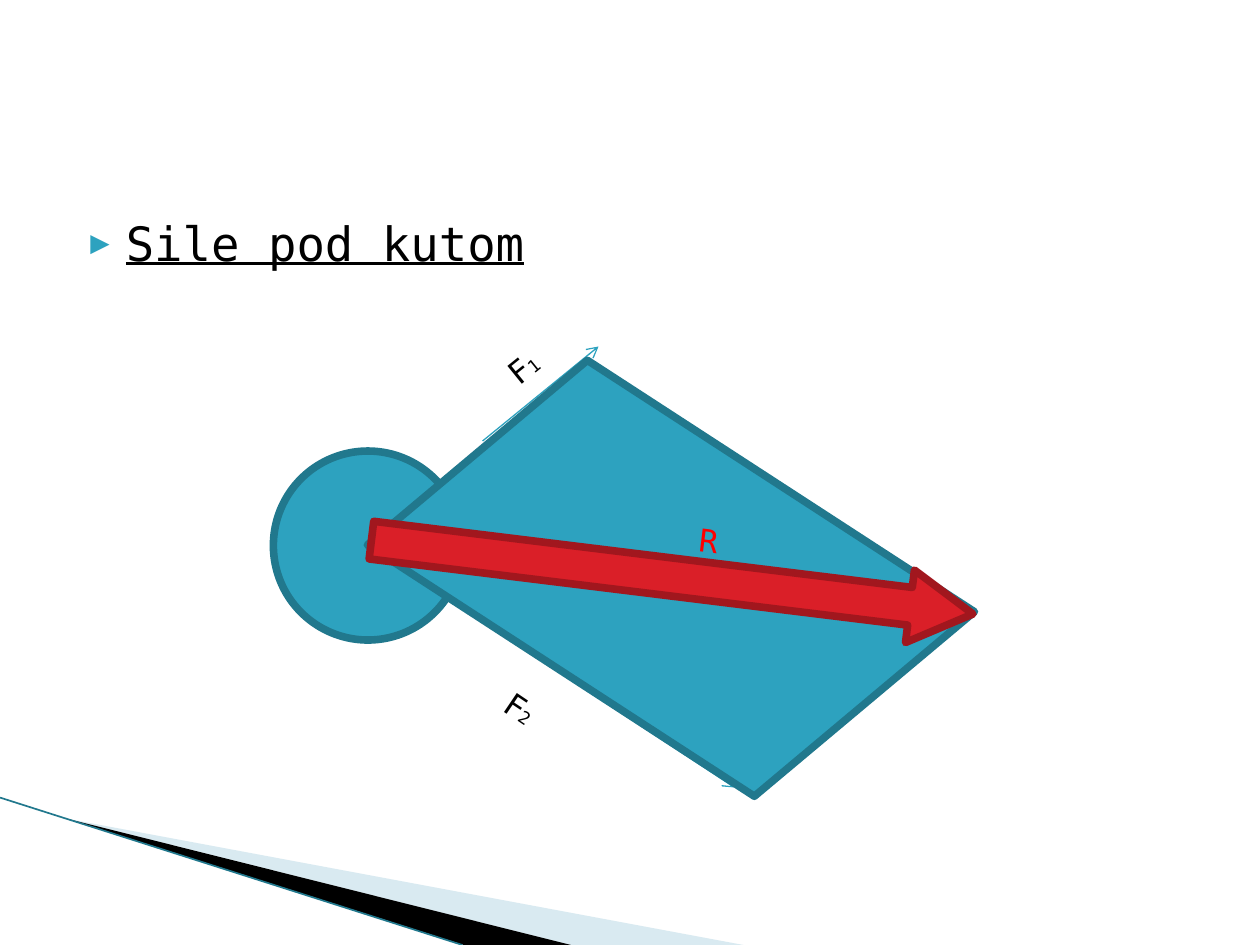
from lxml.etree import SubElement
from pptx import Presentation
from pptx.dml.color import RGBColor
from pptx.enum.shapes import MSO_CONNECTOR, MSO_SHAPE
from pptx.enum.text import MSO_AUTO_SIZE
from pptx.oxml.ns import qn
from pptx.util import Inches, Pt

FONT = "DejaVu Sans Mono"
COLORS = {
    "black": "000000",
    "teal": "2DA2BF",
    "dark teal": "21788D",
    "pale teal": "A0CBDC",
    "red": "DA1F28",
    "dark red": "A1171E",
    "bright red": "FF0000",
}


def color(name):
    return RGBColor.from_string(COLORS[name])


def add_text(slide, box, runs, fill="black", rotation=0, inset=0.1,
             underline=False, bullet=False, grow=False):
    shape = slide.shapes.add_textbox(*map(Inches, box))
    shape.rotation = rotation
    frame = shape.text_frame
    frame.word_wrap = True
    frame.margin_left = Inches(inset)
    if grow:
        frame.auto_size = MSO_AUTO_SIZE.SHAPE_TO_FIT_TEXT
    paragraph = frame.paragraphs[0]
    if bullet:
        add_bullet(paragraph)
    for text, size in runs:
        run = paragraph.add_run()
        run.text = text
        run.font.name = FONT
        run.font.size = Pt(size)
        run.font.underline = underline
        run.font.color.rgb = color(fill)


def add_bullet(paragraph):
    properties = paragraph._p.get_or_add_pPr()
    properties.set("marL", str(Inches(0.4)))
    properties.set("indent", str(Inches(-0.28)))
    bullet_color = SubElement(properties, qn("a:buClr"))
    SubElement(bullet_color, qn("a:srgbClr"), val=COLORS["teal"])
    SubElement(properties, qn("a:buSzPct"), val="68000")
    SubElement(properties, qn("a:buFont"), typeface=FONT)
    SubElement(properties, qn("a:buChar"), char="▶")


def add_figure(slide, kind, box, fill, line, rotation=0, adjustments=()):
    shape = slide.shapes.add_shape(kind, *map(Inches, box))
    shape.shadow.inherit = False
    shape.rotation = rotation
    for index, value in enumerate(adjustments):
        shape.adjustments[index] = value
    shape.fill.solid()
    shape.fill.fore_color.rgb = color(fill)
    shape.line.color.rgb = color(line)
    shape.line.width = Pt(4.33)


def add_line(slide, start, end, stroke, width, arrow=False):
    connector = slide.shapes.add_connector(
        MSO_CONNECTOR.STRAIGHT, *map(Inches, start + end))
    connector.line.color.rgb = color(stroke)
    connector.line.width = Pt(width)
    if arrow:
        SubElement(connector.line._get_or_add_ln(), qn("a:tailEnd"), type="arrow")
    SubElement(connector._element.spPr, qn("a:effectLst"))


def add_wedge(slide, points, fill, opacity=100):
    corners = [(Inches(x), Inches(y)) for x, y in points]
    builder = slide.shapes.build_freeform(*corners[0])
    builder.add_line_segments(corners[1:], close=True)
    shape = builder.convert_to_shape()
    shape.shadow.inherit = False
    shape.fill.solid()
    shape.fill.fore_color.rgb = color(fill)
    shape.line.fill.background()
    if opacity < 100:
        tint = shape._element.spPr.find(qn("a:solidFill"))[0]
        SubElement(tint, qn("a:alpha"), val=str(opacity * 1000))


def add_corner(slide, box):
    left, top, width, height = box
    bottom = top + height
    tip = (left + 0.54, top + 0.17)
    add_wedge(slide, [tip, (left + 5.9, bottom), (left + 4.53, bottom)],
              "pale teal", opacity=40)
    add_wedge(slide, [tip, (left + 4.53, bottom), (left + 3.68, bottom)], "black")
    add_line(slide, (left, top), (left + 3.67, bottom), "dark teal", 0.95)


def add_force_diagram(slide, box):
    left, top, width, height = box

    def place(x, y, *size):
        return (left + x, top + y) + size

    add_figure(slide, MSO_SHAPE.OVAL, place(0, 0.83, 1.5, 1.5), "teal", "dark teal")
    add_line(slide, place(1.66, 0.75), place(2.58, 0), "teal", 0.75, arrow=True)
    add_line(slide, place(1.5, 2.08), place(3.66, 3.5), "teal", 0.75, arrow=True)
    add_text(slide, place(1.34, 0.05, 1.08, 0.4), [("F", 18), ("1", 10)],
             rotation=321, inset=0.55, grow=True)
    add_text(slide, place(1.71, 2.78, 0.83, 0.4), [("F", 18), ("2", 10)],
             rotation=34, grow=True)
    add_figure(slide, MSO_SHAPE.PARALLELOGRAM, place(0.99, 0.75, 4.33, 2.18),
               "teal", "dark teal", rotation=33, adjustments=[0.306])
    add_figure(slide, MSO_SHAPE.RIGHT_ARROW, place(0.76, 1.54, 4.81, 0.58),
               "red", "dark red", rotation=7, adjustments=[0.518, 0.868])
    add_text(slide, place(2.68, 1.31, 1.08, 0.42), [("R", 18)],
             fill="bright red", rotation=7, inset=0.7, grow=True)


def main():
    presentation = Presentation()
    presentation.slide_width = Inches(10)
    presentation.slide_height = Inches(7.5)
    slide = presentation.slides.add_slide(presentation.slide_layouts[6])
    add_corner(slide, (0, 6.33, 5.9, 1.17))
    add_text(slide, (0.5, 1.65, 9, 4.92), [("Sile pod kutom", 27)],
             underline=True, bullet=True)
    add_force_diagram(slide, (2.17, 2.75, 5.57, 3.6))
    presentation.save("out.pptx")


if __name__ == "__main__":
    main()
